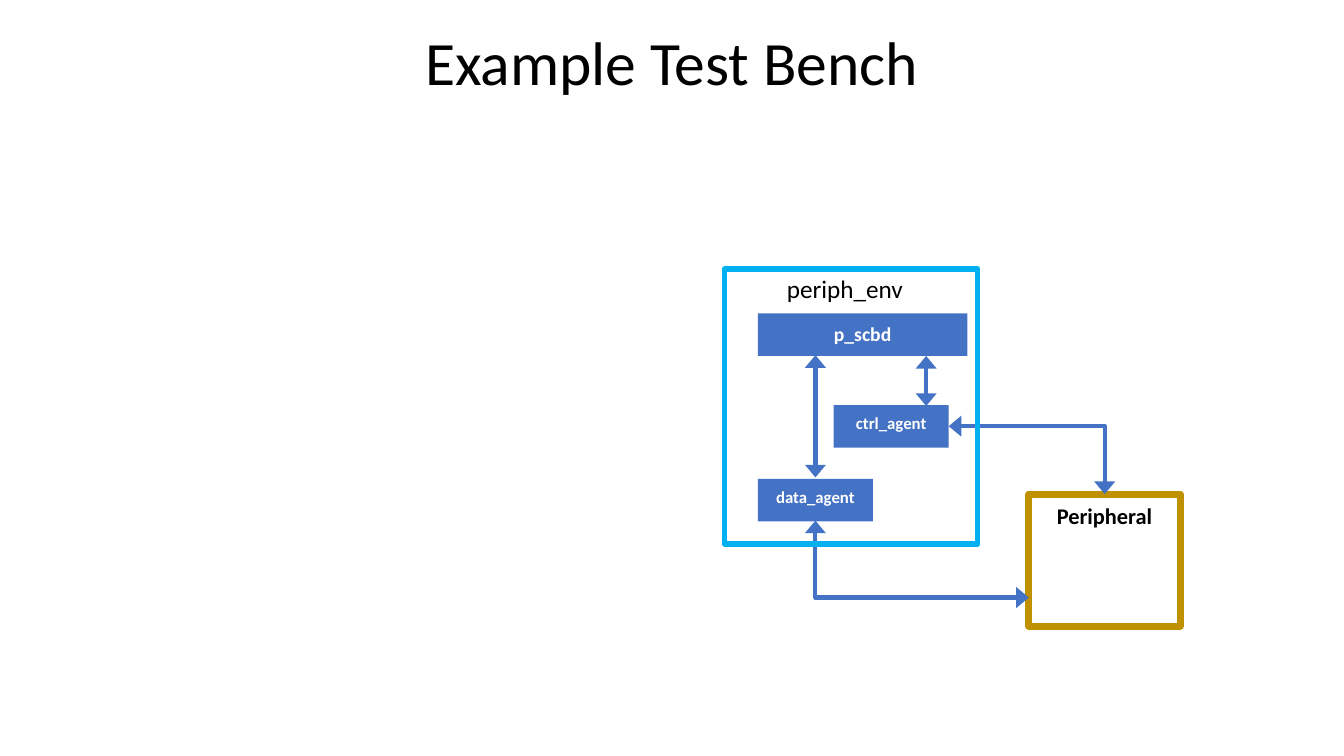
from dataclasses import dataclass

from lxml import etree
from pptx import Presentation
from pptx.dml.color import RGBColor
from pptx.enum.shapes import MSO_CONNECTOR, MSO_SHAPE
from pptx.enum.text import MSO_ANCHOR, MSO_AUTO_SIZE, PP_ALIGN
from pptx.oxml.ns import qn
from pptx.util import Cm, Pt

RECTANGLE = MSO_SHAPE.RECTANGLE
STRAIGHT, ELBOW = MSO_CONNECTOR.STRAIGHT, MSO_CONNECTOR.ELBOW
TOP, MIDDLE = MSO_ANCHOR.TOP, MSO_ANCHOR.MIDDLE
CENTER, LEFT = PP_ALIGN.CENTER, PP_ALIGN.LEFT
NO_AUTOFIT, GROW = MSO_AUTO_SIZE.NONE, MSO_AUTO_SIZE.SHAPE_TO_FIT_TEXT

FONT = "Calibri"
COLORS = {
    "text": "000000",
    "light": "FFFFFF",
    "component": "4472C4",
    "environment": "00B0F0",
    "peripheral": "BF9000",
}


@dataclass
class Block:
    """A rectangle, placed in centimetres; filled unless it has an outline."""
    left: float
    top: float
    width: float
    height: float
    color: str
    text: str = ""
    size: int = 12
    outline: float = 0


@dataclass
class Link:
    """A double-headed arrow; an elbow runs sideways first, then up or down."""
    start: tuple[float, float]
    end: tuple[float, float]
    elbow: bool = False


COMPONENTS = [
    Block(25.93, 12.45, 3.81, 3.33, "peripheral", "Peripheral", 16, outline=5),
    Block(21.01, 10.21, 2.9, 1.07, "component", "ctrl_agent"),
    Block(19.1, 7.9, 5.28, 1.07, "component", "p_scbd", 14),
    Block(19.1, 12.07, 2.9, 1.07, "component", "data_agent"),
]
LINKS = [
    Link((23.91, 10.74), (27.84, 12.45), elbow=True),
    Link((23.34, 10.23), (23.34, 8.97)),
    Link((25.93, 15.06), (20.55, 13.12), elbow=True),
    Link((20.55, 12.03), (20.55, 8.95)),
]
ENVIRONMENT = Block(18.26, 6.78, 6.38, 6.93, "environment", outline=4)


def rgb(name: str) -> RGBColor:
    return RGBColor.from_string(COLORS[name])


def write(frame, text: str, size: int, color: str = "text",
          bold: bool = False, align=CENTER):
    """Put one formatted paragraph in a text frame and return it."""
    frame.text = text
    para = frame.paragraphs[0]
    para.alignment = align
    for span in para.runs:
        span.font.name = FONT
        span.font.size = Pt(size)
        span.font.bold = bold
        span.font.color.rgb = rgb(color)
    return para


def draw_block(page, block: Block) -> None:
    box = page.shapes.add_shape(RECTANGLE, Cm(block.left), Cm(block.top),
                                Cm(block.width), Cm(block.height))
    box.shadow.inherit = False
    if block.outline:
        box.fill.background()
        box.line.color.rgb = rgb(block.color)
        box.line.width = Pt(block.outline)
    else:
        box.fill.solid()
        box.fill.fore_color.rgb = rgb(block.color)
        box.line.fill.background()
    if block.text:
        frame = box.text_frame
        frame.vertical_anchor = TOP
        frame.word_wrap = not block.outline
        frame.margin_left = frame.margin_right = Cm(0.3)
        frame.margin_top = frame.margin_bottom = Cm(0.2)
        write(frame, block.text, block.size,
              "text" if block.outline else "light", bold=True)


def draw_link(page, link: Link) -> None:
    arrow = page.shapes.add_connector(
        ELBOW if link.elbow else STRAIGHT,
        *(Cm(value) for value in link.start + link.end))
    arrow.line.color.rgb = rgb("component")
    arrow.line.width = Pt(3)
    properties = arrow._element.spPr
    if link.elbow:
        # One corner instead of the default two
        properties.find(qn("a:prstGeom")).set("prst", "bentConnector2")
    line = properties.find(qn("a:ln"))
    for tag in ("a:headEnd", "a:tailEnd"):
        etree.SubElement(line, qn(tag), type="triangle", w="lg", len="med")
    etree.SubElement(properties, qn("a:effectLst"))


def main() -> None:
    deck = Presentation()
    deck.slide_width, deck.slide_height = Cm(33.87), Cm(19.05)
    page = deck.slides.add_slide(deck.slide_layouts[5])

    # Title
    title = page.shapes.title
    title.left, title.top = Cm(2.33), Cm(0.53)
    title.width, title.height = Cm(29.21), Cm(2.26)
    title.text_frame.vertical_anchor = MIDDLE
    title.text_frame.auto_size = NO_AUTOFIT
    write(title.text_frame, "Example Test Bench", 44).line_spacing = 0.9

    # Components and the links between them
    for block in COMPONENTS:
        draw_block(page, block)
    for link in LINKS:
        draw_link(page, link)

    # Environment frame and its label
    draw_block(page, ENVIRONMENT)
    label = page.shapes.add_textbox(Cm(19.58), Cm(6.76), Cm(3.48), Cm(1.02))
    label.text_frame.word_wrap = False
    label.text_frame.auto_size = GROW
    write(label.text_frame, "periph_env", 18, align=LEFT)

    deck.save("out.pptx")


if __name__ == "__main__":
    main()
